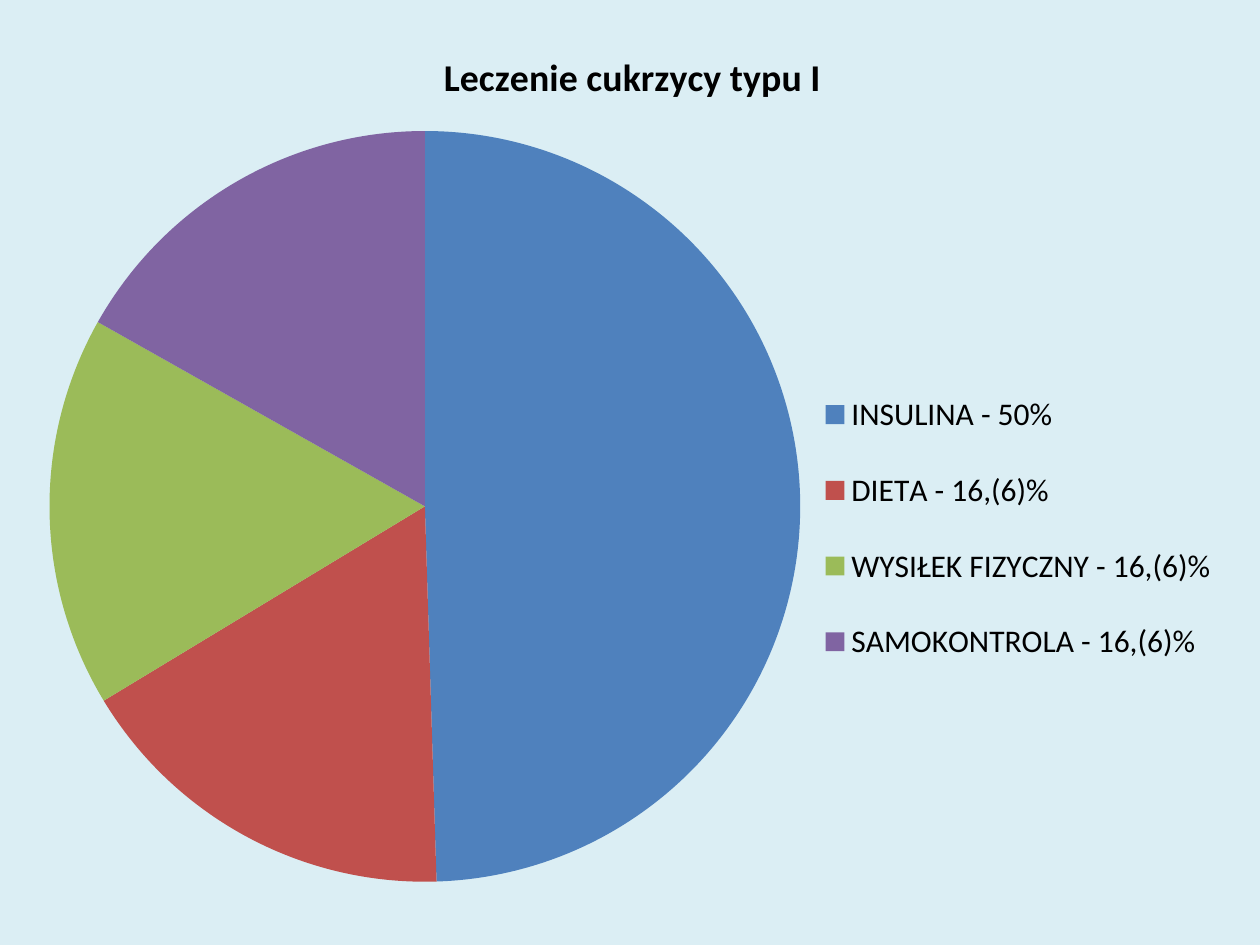
from dataclasses import dataclass

from lxml.etree import SubElement
from pptx import Presentation
from pptx.chart.chart import Chart
from pptx.chart.data import CategoryChartData
from pptx.dml.color import RGBColor
from pptx.enum.chart import XL_CHART_TYPE, XL_LEGEND_POSITION
from pptx.oxml.ns import qn
from pptx.util import Cm, Pt


@dataclass(frozen=True)
class Theme:
    background: str = "DBEEF4"
    text: str = "000000"
    font: str = "Calibri"
    title_size: float = 21.6
    legend_size: float = 18


@dataclass(frozen=True)
class Slice:
    label: str
    share: int
    color: str


THEME = Theme()

SLICES = [
    Slice("INSULINA - 50%", 50, "4F81BD"),
    Slice("DIETA - 16,(6)%", 17, "C0504D"),
    Slice("WYSIŁEK FIZYCZNY - 16,(6)%", 17, "9BBB59"),
    Slice("SAMOKONTROLA - 16,(6)%", 17, "8064A2"),
]

# Positions as fractions of the chart area
EDGES = {"xMode": "edge", "yMode": "edge"}
LAYOUTS = {
    "title": {**EDGES, "x": 0.34, "y": 0.02},
    "plotArea": {"layoutTarget": "inner", **EDGES, "x": 0.02, "y": 0.12, "w": 0.62, "h": 0.86},
    "legend": {**EDGES, "x": 0.65, "y": 0.38, "w": 0.34, "h": 0.39},
}


def format_font(font, size: float, bold: bool) -> None:
    values = {"name": THEME.font, "size": Pt(size), "bold": bold}
    for name, value in values.items():
        setattr(font, name, value)
    font.color.rgb = RGBColor.from_string(THEME.text)


def place_part(chart: Chart, part_name: str, values: dict) -> None:
    """Give a chart part a manual layout."""
    part = chart.element.find(f".//{qn('c:' + part_name)}")
    for old_layout in part.findall(qn("c:layout")):
        part.remove(old_layout)
    layout = SubElement(part, qn("c:layout"))
    manual = SubElement(layout, qn("c:manualLayout"))
    for key, value in values.items():
        SubElement(manual, qn(f"c:{key}")).set("val", str(value))
    overlay = part.find(qn("c:overlay"))
    part.insert(0 if overlay is None else part.index(overlay), layout)


def add_pie(page, title: str, slices: list[Slice]) -> Chart:
    data = CategoryChartData()
    data.categories = [item.label for item in slices]
    data.add_series("Series 1", [item.share for item in slices])
    chart = page.shapes.add_chart(
        XL_CHART_TYPE.PIE, Cm(0.51), Cm(0.53), Cm(24.41), Cm(17.6), data
    ).chart
    format_font(chart.font, THEME.legend_size, False)

    # Title
    chart.has_title = True
    para = chart.chart_title.text_frame.paragraphs[0]
    span = para.add_run()
    span.text = title
    format_font(span.font, THEME.title_size, True)
    chart.chart_title.include_in_layout = False

    # Legend
    chart.has_legend = True
    chart.legend.position = XL_LEGEND_POSITION.RIGHT
    chart.legend.include_in_layout = False
    format_font(chart.legend.font, THEME.legend_size, False)

    # Slice colours
    series = chart.plots[0].series[0]
    for index, item in enumerate(slices):
        fill = series.points[index].format.fill
        fill.solid()
        fill.fore_color.rgb = RGBColor.from_string(item.color)

    for part_name, values in LAYOUTS.items():
        place_part(chart, part_name, values)
    return chart


def main() -> None:
    deck = Presentation()
    deck.slide_width, deck.slide_height = Cm(25.4), Cm(19.05)
    page = deck.slides.add_slide(deck.slide_layouts[6])
    page.background.fill.solid()
    page.background.fill.fore_color.rgb = RGBColor.from_string(THEME.background)
    add_pie(page, "Leczenie cukrzycy typu I", SLICES)
    deck.save("out.pptx")


if __name__ == "__main__":
    main()
